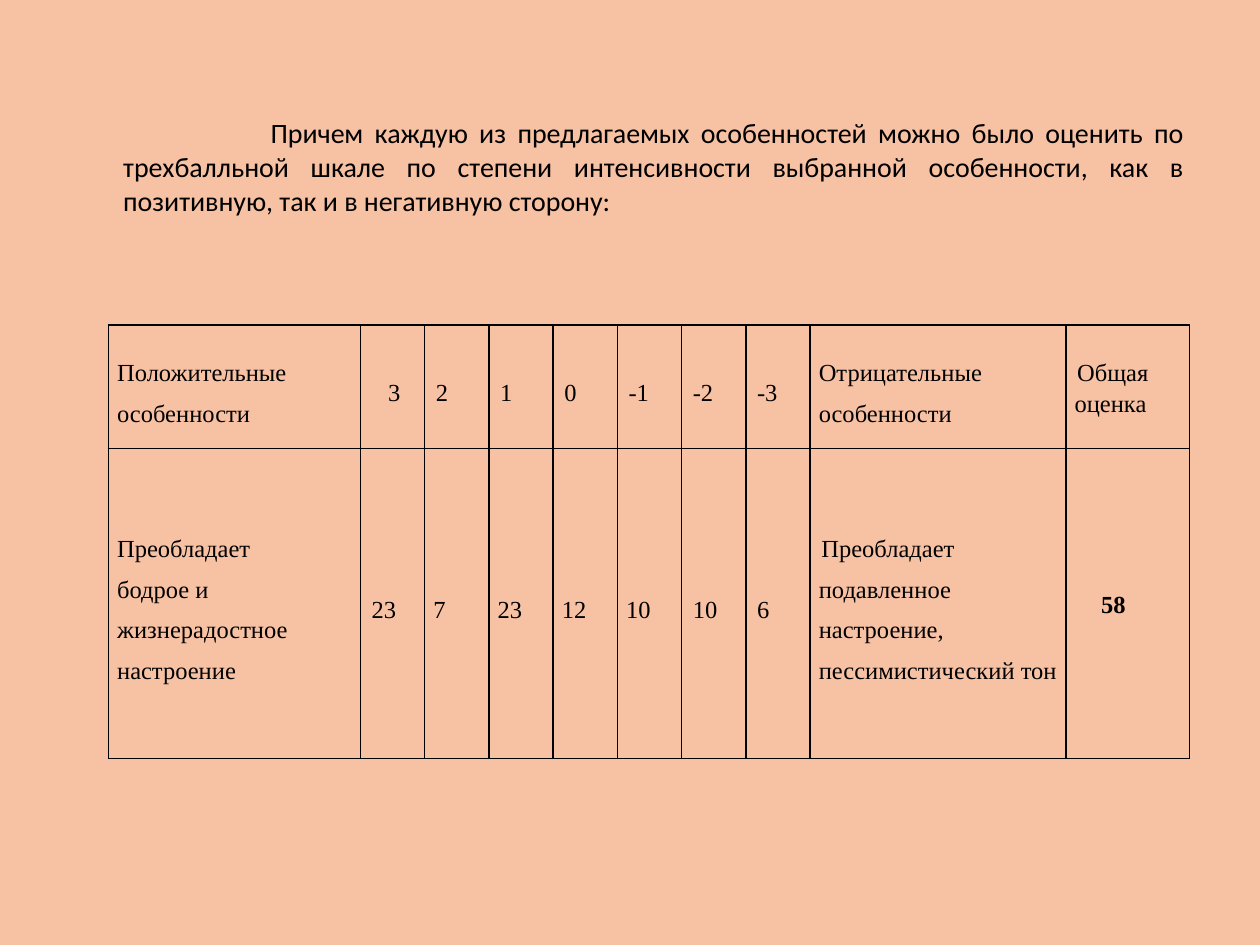
from lxml.etree import SubElement
from pptx import Presentation
from pptx.dml.color import RGBColor
from pptx.enum.text import MSO_ANCHOR, PP_ALIGN
from pptx.oxml.ns import qn
from pptx.util import Inches, Pt

BACKGROUND = RGBColor(0xF7, 0xC1, 0xA4)
BLACK = RGBColor(0, 0, 0)


def set_indent(paragraph, first_line, left=0):
    properties = paragraph._p.get_or_add_pPr()
    properties.set("marL", str(Inches(left)))
    properties.set("indent", str(Inches(first_line)))


def add_borders(cell):
    properties = cell._tc.get_or_add_tcPr()
    for position, side in enumerate(("a:lnL", "a:lnR", "a:lnT", "a:lnB")):
        line = SubElement(properties, qn(side), w=str(Pt(1)))
        fill = SubElement(line, qn("a:solidFill"))
        SubElement(fill, qn("a:srgbClr"), val=str(BLACK))
        properties.insert(position, line)


presentation = Presentation()
presentation.slide_width = Inches(10)
presentation.slide_height = Inches(7.5)
slide = presentation.slides.add_slide(presentation.slide_layouts[6])
slide.background.fill.solid()
slide.background.fill.fore_color.rgb = BACKGROUND

# Introductory paragraph
introduction = slide.shapes.add_textbox(Inches(0.5), Inches(0.62), Inches(9), Inches(1.33))
text_frame = introduction.text_frame
text_frame.word_wrap = True
text_frame.margin_top = Inches(0.3)
text_frame.text = (
    "Причем каждую из предлагаемых особенностей можно было оценить по "
    "трехбалльной шкале по степени интенсивности выбранной особенности, "
    "как в позитивную, так и в негативную сторону:"
)
paragraph = text_frame.paragraphs[0]
paragraph.alignment = PP_ALIGN.JUSTIFY
set_indent(paragraph, 1.17, left=0.38)
paragraph.font.size = Pt(16)
paragraph.runs[0].font.size = Pt(16)
paragraph.runs[0].font.name = "Calibri"
paragraph.runs[0].font.color.rgb = BLACK

# Rating table: each cell is its text and first-line indent
column_widths = [2] + [0.51] * 7 + [2.03, 0.98]
row_heights = [0.98, 2.46]
rows = [
    [("Положительные особенности", 0), ("3", 0.15), ("2", 0.02), ("1", 0.02),
     ("0", 0.02), ("-1", 0.02), ("-2", 0.02), ("-3", 0.02),
     ("Отрицательные особенности", 0), ("Общая оценка", 0.02)],
    [("Преобладает\nбодрое и жизнерадостное\vнастроение", 0), ("23", 0.02), ("7", 0),
     ("23", 0), ("12", 0), ("10", 0), ("10", 0.02), ("6", 0.02),
     ("Преобладает подавленное настроение,\vпессимистический тон", 0.02), ("58", 0.21)],
]
table = slide.shapes.add_table(
    len(rows), len(column_widths), Inches(0.86), Inches(2.58), Inches(8.59), Inches(3.44)
).table
table.first_row = False
table.horz_banding = False
for column, width in zip(table.columns, column_widths):
    column.width = Inches(width)
for row, height in zip(table.rows, row_heights):
    row.height = Inches(height)

for row_index, row in enumerate(rows):
    for column_index, (text, first_line) in enumerate(row):
        cell = table.cell(row_index, column_index)
        cell.fill.background()
        add_borders(cell)
        cell.vertical_anchor = MSO_ANCHOR.MIDDLE
        cell.margin_left = cell.margin_right = Inches(0.07)
        cell.margin_top = cell.margin_bottom = 0
        cell.text_frame.text = text
        is_total = column_index == len(row) - 1
        for paragraph in cell.text_frame.paragraphs:
            paragraph.line_spacing = 1.15 if is_total else 1.5
            set_indent(paragraph, first_line)
            for run in paragraph.runs:
                run.font.size = Pt(14)
                run.font.name = "Times New Roman"
                run.font.color.rgb = BLACK
                run.font.bold = is_total and row_index == 1

presentation.save("out.pptx")
